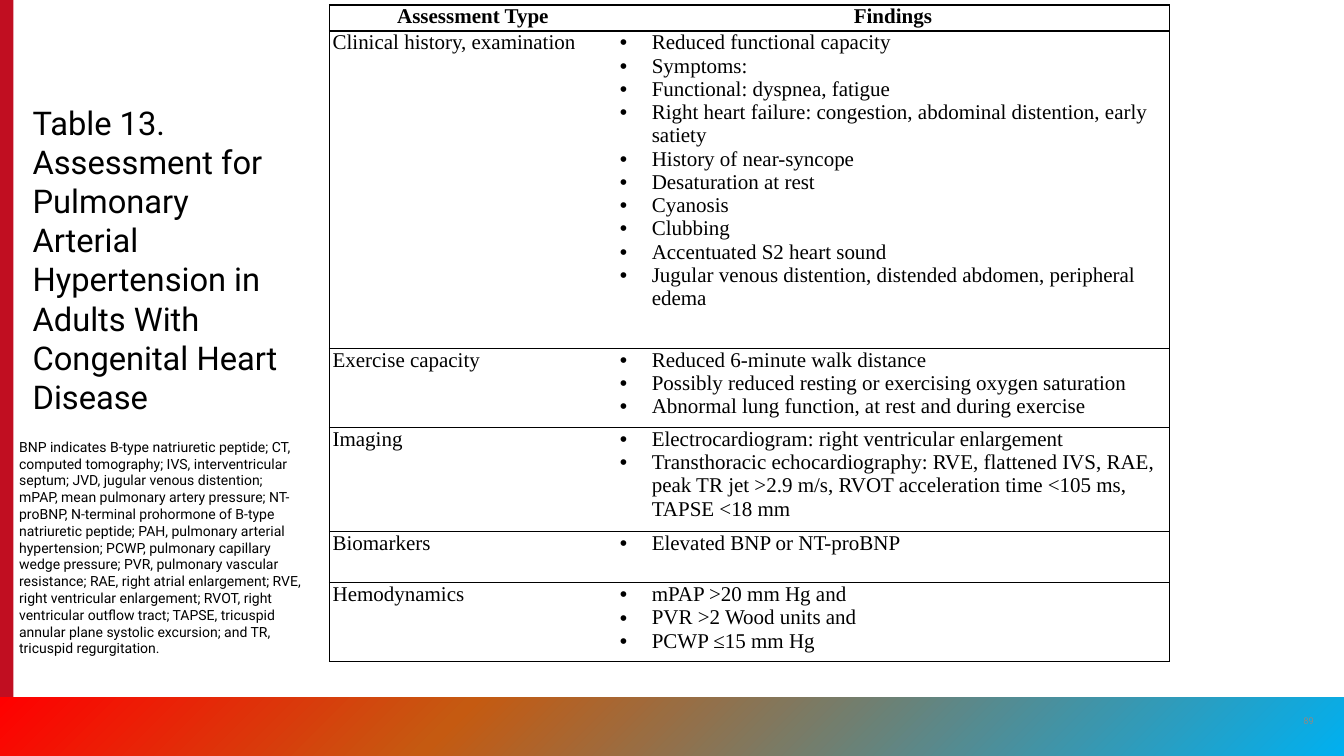
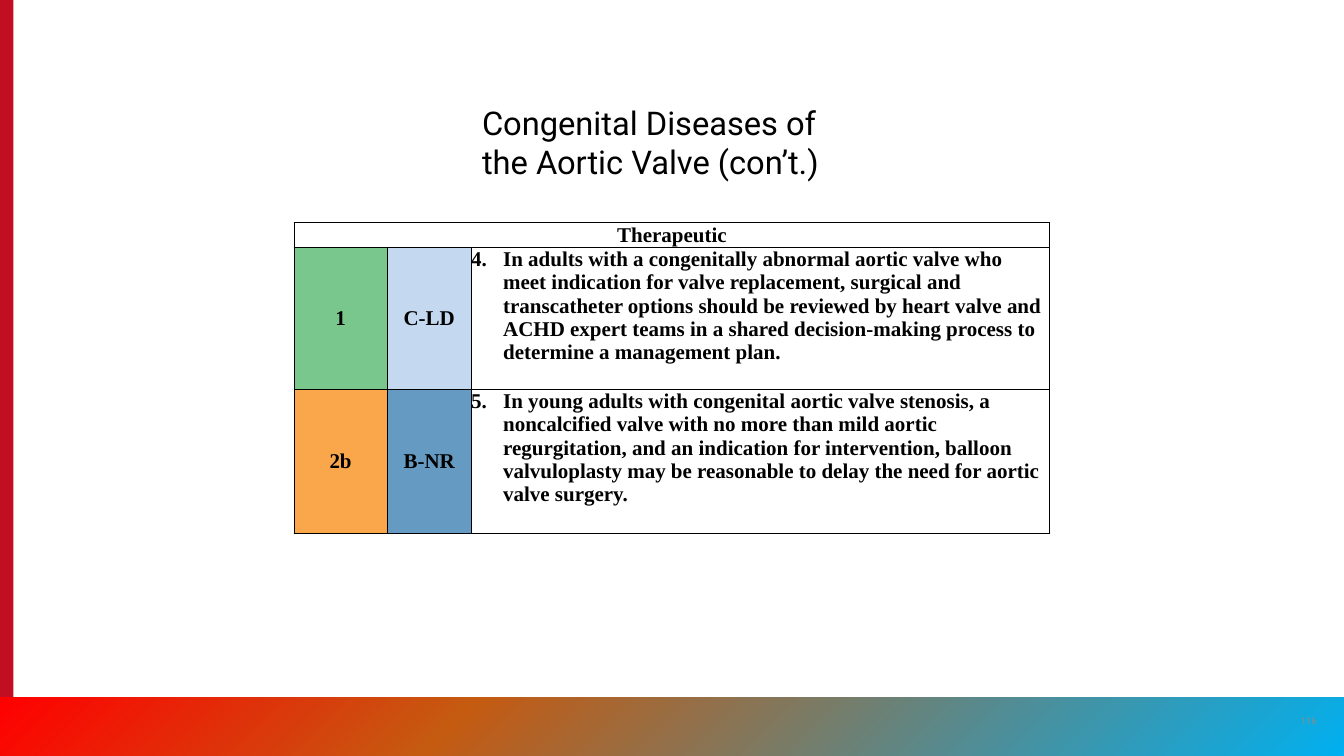
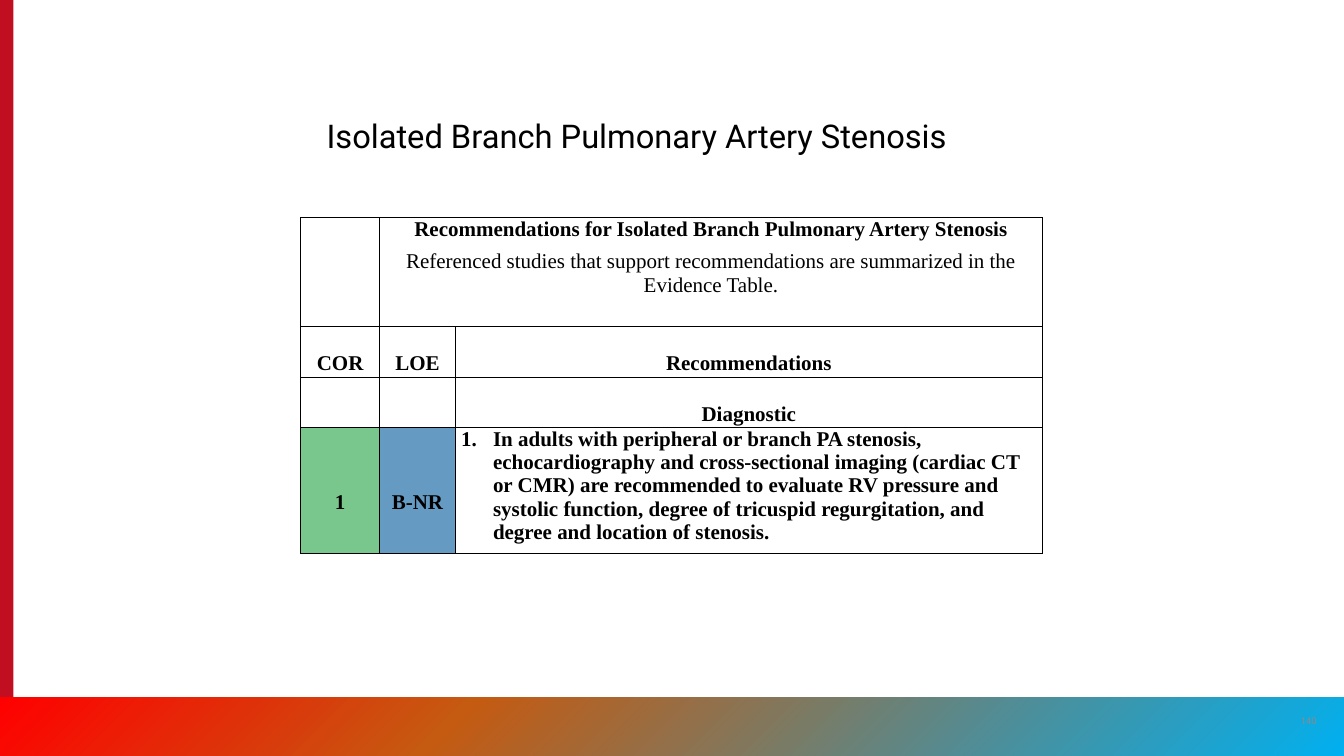
from dataclasses import dataclass
from typing import Any, Optional

import lxml.etree
import pptx
import pptx.dml.color
import pptx.enum.shapes
import pptx.enum.text
import pptx.oxml.ns
import pptx.util

Inches = pptx.util.Inches
Pt = pptx.util.Pt
qn = pptx.oxml.ns.qn
RGBColor = pptx.dml.color.RGBColor
Align = pptx.enum.text.PP_ALIGN
Anchor = pptx.enum.text.MSO_ANCHOR


@dataclass(frozen=True)
class Theme:
    heading_font: str = "Roboto"
    table_font: str = "Times New Roman"
    title_size: float = 28
    table_size: float = 18
    note_size: float = 12
    number_size: float = 8
    ink: str = "000000"
    muted: str = "8A8B8A"
    red_bar: str = "C10E21"
    band_stops: tuple[tuple[int, str], ...] = ((0, "FF0000"), (34, "C55A11"), (100, "00B0F0"))
    class_1: str = "79C78D"
    class_2b: str = "FAA74B"
    level_c_ld: str = "C4D9F0"
    level_b_nr: str = "659BC2"


THEME = Theme()


@dataclass(frozen=True)
class Box:
    left: float
    top: float
    width: float
    height: float

    def lengths(self) -> tuple[int, ...]:
        return tuple(Inches(value) for value in (self.left, self.top, self.width, self.height))


@dataclass(frozen=True)
class Entry:
    text: str
    bold: bool = False
    centred: bool = False
    bullet: bool = False
    number: Optional[int] = None
    line_spacing: float = 1.0


@dataclass(frozen=True)
class Cell:
    entries: tuple[Entry, ...] = ()
    fill: Optional[str] = None
    middle: bool = False
    span: int = 1


@dataclass(frozen=True)
class TableSpec:
    left: float
    top: float
    columns: tuple[float, ...]
    rows: tuple[float, ...]
    cells: tuple[tuple[Optional[Cell], ...], ...]
    inset: float
    header_line: float = 1.0
    inner_verticals: bool = True


@dataclass(frozen=True)
class SlideSpec:
    number: str
    title: str
    title_box: Box
    table: TableSpec
    note: str = ""


NOTE_BOX = Box(0.13, 5.17, 3.57, 3.13)


def heading(text: str, line_spacing: float = 1.0) -> Entry:
    return Entry(text, bold=True, centred=True, line_spacing=line_spacing)


def label(text: str, fill: Optional[str] = None, line_spacing: float = 1.0, span: int = 1) -> Cell:
    return Cell((heading(text, line_spacing),), fill, True, span)


def recommendation(number: int, text: str) -> Cell:
    return Cell((Entry(text, bold=True, number=number),))


def assessment(name: str, *findings: str) -> tuple[Cell, Cell]:
    return Cell((Entry(name),)), Cell(tuple(Entry(finding, bullet=True) for finding in findings))


def apply_format(target: Any, values: dict[str, Any]) -> None:
    for name, value in values.items():
        setattr(target, name, value)


def set_font(paragraph: Any, name: str, size: float, color: str, bold: bool = False) -> None:
    for run in paragraph.runs:
        apply_format(run.font, {"name": name, "size": Pt(size), "bold": bold})
        run.font.color.rgb = RGBColor.from_string(color)


def add_rectangle(slide: Any, box: Box) -> Any:
    shape = slide.shapes.add_shape(pptx.enum.shapes.MSO_SHAPE.RECTANGLE, *box.lengths())
    shape.shadow.inherit = False
    shape.line.fill.background()
    return shape


def add_frame(slide: Any) -> None:
    bar = add_rectangle(slide, Box(0, 0, 0.16, 9))
    bar.fill.solid()
    bar.fill.fore_color.rgb = RGBColor.from_string(THEME.red_bar)
    band = add_rectangle(slide, Box(0, 8.3, 16, 0.7))
    band.fill.gradient()
    band.fill.gradient_angle = 315
    stops = next(band._element.iter(qn("a:gsLst")))
    for stop in list(stops):
        stops.remove(stop)
    for position, color in THEME.band_stops:
        stop = lxml.etree.SubElement(stops, qn("a:gs"), pos=str(position * 1000))
        lxml.etree.SubElement(stop, qn("a:srgbClr"), val=color)


def add_text(slide: Any, box: Box, text: str, size: float, color: str = THEME.ink,
             centred: bool = False) -> None:
    frame = slide.shapes.add_textbox(*box.lengths()).text_frame
    apply_format(frame, {
        "word_wrap": True,
        "vertical_anchor": Anchor.MIDDLE if centred else Anchor.TOP,
    })
    paragraph = frame.paragraphs[0]
    paragraph.text = text
    paragraph.alignment = Align.CENTER if centred else Align.LEFT
    set_font(paragraph, THEME.heading_font, size, color)


def add_marker(paragraph: Any, entry: Entry) -> None:
    properties = paragraph._p.get_or_add_pPr()
    properties.set("marL", str(Inches(0.38)))
    properties.set("indent", str(-Inches(0.38)))
    if entry.bullet:
        lxml.etree.SubElement(properties, qn("a:buFont"), typeface="Arial")
        lxml.etree.SubElement(properties, qn("a:buChar"), char="•")
    else:
        lxml.etree.SubElement(properties, qn("a:buAutoNum"), type="arabicPeriod",
                              startAt=str(entry.number))


def fill_cell(cell: Any, content: Cell, inset: float) -> None:
    apply_format(cell, {
        "margin_left": Inches(inset),
        "margin_right": Inches(inset),
        "margin_top": 0,
        "margin_bottom": 0,
        "vertical_anchor": Anchor.MIDDLE if content.middle else Anchor.TOP,
    })
    if content.fill:
        cell.fill.solid()
        cell.fill.fore_color.rgb = RGBColor.from_string(content.fill)
    else:
        cell.fill.background()
    for index, entry in enumerate(content.entries):
        frame = cell.text_frame
        paragraph = frame.add_paragraph() if index else frame.paragraphs[0]
        paragraph.text = entry.text
        if entry.bullet or entry.number is not None:
            add_marker(paragraph, entry)
        apply_format(paragraph, {
            "alignment": Align.CENTER if entry.centred else Align.LEFT,
            "line_spacing": entry.line_spacing,
            "space_after": Pt(0 if entry.bullet else 8),
        })
        set_font(paragraph, THEME.table_font, THEME.table_size, THEME.ink, entry.bold)


def set_borders(cell: Any, widths: dict[str, float]) -> None:
    properties = cell._tc.get_or_add_tcPr()
    for index, (side, width) in enumerate(widths.items()):
        line = lxml.etree.Element(qn(f"a:ln{side}"), w=str(Pt(width)))
        if width:
            solid = lxml.etree.SubElement(line, qn("a:solidFill"))
            lxml.etree.SubElement(solid, qn("a:srgbClr"), val=THEME.ink)
        else:
            lxml.etree.SubElement(line, qn("a:noFill"))
        properties.insert(index, line)


def add_table(slide: Any, spec: TableSpec) -> None:
    box = Box(spec.left, spec.top, sum(spec.columns), sum(spec.rows))
    table = slide.shapes.add_table(len(spec.rows), len(spec.columns), *box.lengths()).table
    apply_format(table, {"first_row": False, "horz_banding": False})
    for column, width in zip(table.columns, spec.columns):
        column.width = Inches(width)
    for row, height in zip(table.rows, spec.rows):
        row.height = Inches(height)
    last = len(spec.columns) - 1
    inner = 1.0 if spec.inner_verticals else 0
    for row_index, contents in enumerate(spec.cells):
        for column_index, content in enumerate(contents):
            cell = table.cell(row_index, column_index)
            if content:
                fill_cell(cell, content, spec.inset)
                if content.span > 1:
                    cell.merge(table.cell(row_index, column_index + content.span - 1))
            set_borders(cell, {
                "L": inner if column_index else 1.0,
                "R": inner if column_index < last else 1.0,
                "T": spec.header_line if row_index < 2 else 1.0,
                "B": spec.header_line if row_index == 0 else 1.0,
            })


ASSESSMENT_TABLE = TableSpec(
    left=3.92, top=0.06, columns=(3.42, 6.58), rows=(0.31, 3.78, 0.94, 1.24, 0.61, 0.94),
    inset=0.04, header_line=1.5, inner_verticals=False,
    cells=(
        (Cell((heading("Assessment Type"),)), Cell((heading("Findings"),))),
        assessment(
            "Clinical history, examination",
            "Reduced functional capacity",
            "Symptoms:",
            "Functional: dyspnea, fatigue",
            "Right heart failure: congestion, abdominal distention, early satiety",
            "History of near-syncope",
            "Desaturation at rest",
            "Cyanosis",
            "Clubbing",
            "Accentuated S2 heart sound",
            "Jugular venous distention, distended abdomen, peripheral edema",
        ),
        assessment(
            "Exercise capacity",
            "Reduced 6-minute walk distance",
            "Possibly reduced resting or exercising oxygen saturation",
            "Abnormal lung function, at rest and during exercise",
        ),
        assessment(
            "Imaging",
            "Electrocardiogram: right ventricular enlargement",
            "Transthoracic echocardiography: RVE, flattened IVS, RAE, peak TR jet >2.9 m/s, "
            "RVOT acceleration time <105 ms, TAPSE <18 mm",
        ),
        assessment("Biomarkers", "Elevated BNP or NT-proBNP"),
        assessment("Hemodynamics", "mPAP >20 mm Hg and", "PVR >2 Wood units and", "PCWP ≤15 mm Hg"),
    ),
)

AORTIC_TABLE = TableSpec(
    left=3.5, top=2.65, columns=(1.11, 1, 6.89), rows=(0.29, 1.69, 1.71), inset=0,
    cells=(
        (label("Therapeutic", span=3), None, None),
        (label("1", THEME.class_1), label("C-LD", THEME.level_c_ld), recommendation(
            4, "In adults with a congenitally abnormal aortic valve who meet indication for valve "
            "replacement, surgical and transcatheter options should be reviewed by heart valve and "
            "ACHD expert teams in a shared decision-making process to determine a management plan.")),
        (label("2b", THEME.class_2b), label("B-NR", THEME.level_b_nr), recommendation(
            5, "In young adults with congenital aortic valve stenosis, a noncalcified valve with no "
            "more than mild aortic regurgitation, and an indication for intervention, balloon "
            "valvuloplasty may be reasonable to delay the need for aortic valve surgery.")),
    ),
)

STENOSIS_TABLE = TableSpec(
    left=3.58, top=2.59, columns=(0.94, 0.9, 6.99), rows=(1.3, 0.6, 0.6, 1.5), inset=0.07,
    cells=(
        (Cell(), Cell((
            heading("Recommendations for Isolated Branch Pulmonary Artery Stenosis"),
            Entry("Referenced studies that support recommendations are summarized in the "
                  "Evidence Table.", centred=True),
        ), span=2), None),
        tuple(label(text, line_spacing=2.0) for text in ("COR", "LOE", "Recommendations")),
        (Cell(), Cell(), label("Diagnostic", line_spacing=2.0)),
        (label("1", THEME.class_1, 2.0), label("B-NR", THEME.level_b_nr, 2.0), recommendation(
            1, "In adults with peripheral or branch PA stenosis, echocardiography and "
            "cross-sectional imaging (cardiac CT or CMR) are recommended to evaluate RV pressure "
            "and systolic function, degree of tricuspid regurgitation, and degree and location of "
            "stenosis.")),
    ),
)

SLIDES = (
    SlideSpec(
        "89",
        "Table 13. Assessment for Pulmonary Arterial Hypertension in Adults With Congenital "
        "Heart Disease",
        Box(0.29, 1.17, 3.25, 3.96), ASSESSMENT_TABLE,
        "BNP indicates B-type natriuretic peptide; CT, computed tomography; IVS, interventricular "
        "septum; JVD, jugular venous distention; mPAP, mean pulmonary artery pressure; NT-proBNP, "
        "N-terminal prohormone of B-type natriuretic peptide; PAH, pulmonary arterial "
        "hypertension; PCWP, pulmonary capillary wedge pressure; PVR, pulmonary vascular "
        "resistance; RAE, right atrial enlargement; RVE, right ventricular enlargement; RVOT, "
        "right ventricular outflow tract; TAPSE, tricuspid annular plane systolic excursion; and "
        "TR, tricuspid regurgitation.",
    ),
    SlideSpec("116", "Congenital Diseases of the Aortic Valve (con’t.)",
              Box(5.64, 1.17, 4.73, 1.04), AORTIC_TABLE),
    SlideSpec("140", "Isolated Branch Pulmonary Artery Stenosis",
              Box(3.79, 1.33, 8.42, 0.57), STENOSIS_TABLE),
)


def add_slide(presentation: Any, spec: SlideSpec) -> None:
    slide = presentation.slides.add_slide(presentation.slide_layouts[6])
    add_frame(slide)
    add_text(slide, Box(15.34, 8.34, 0.48, 0.48), spec.number, THEME.number_size,
             THEME.muted, centred=True)
    add_text(slide, spec.title_box, spec.title, THEME.title_size)
    add_table(slide, spec.table)
    if spec.note:
        add_text(slide, NOTE_BOX, spec.note, THEME.note_size)


def main() -> None:
    presentation = pptx.Presentation()
    apply_format(presentation, {"slide_width": Inches(16), "slide_height": Inches(9)})
    for spec in SLIDES:
        add_slide(presentation, spec)
    presentation.save("out.pptx")


if __name__ == "__main__":
    main()
